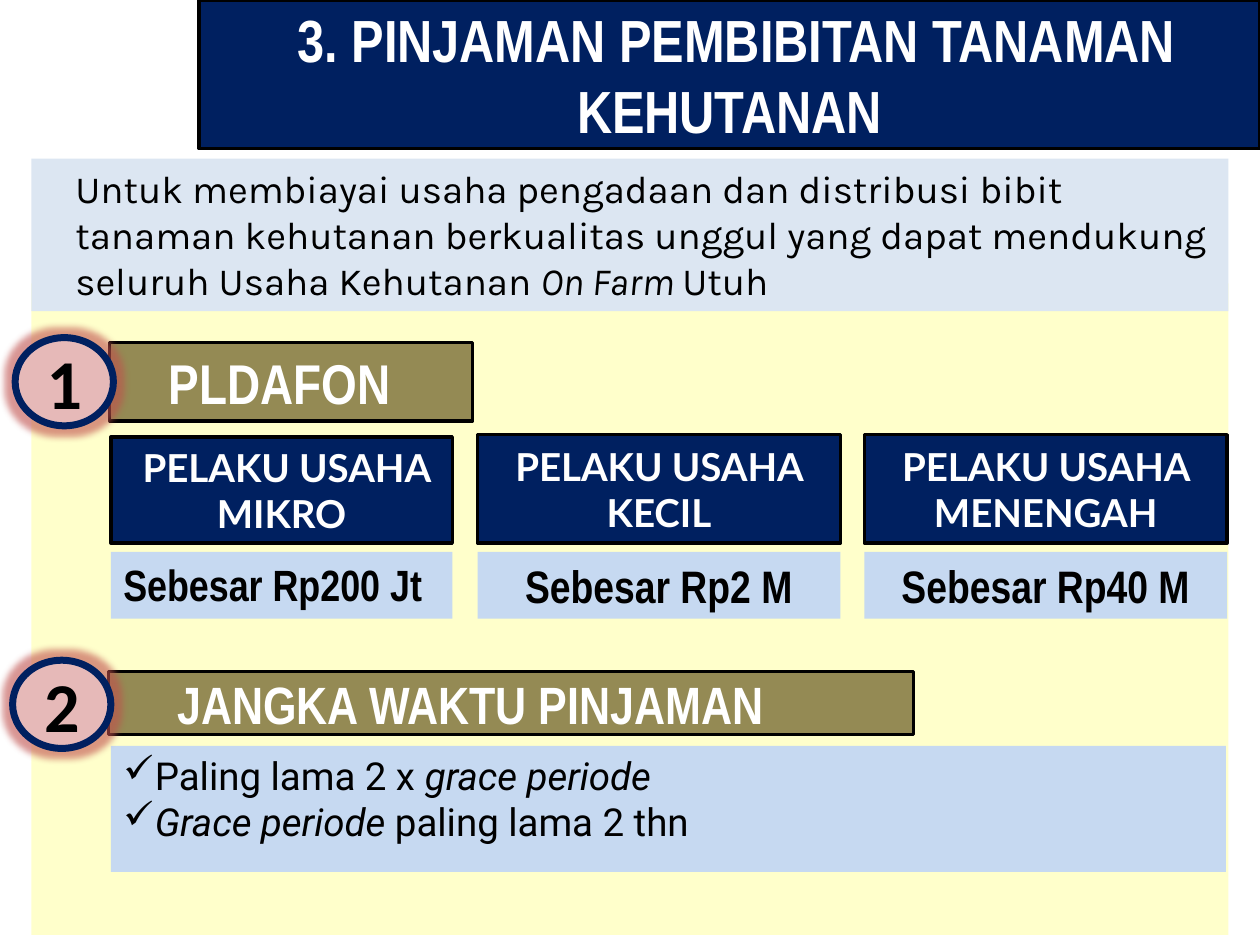
from dataclasses import dataclass

from lxml.etree import SubElement
from pptx import Presentation
from pptx.dml.color import RGBColor
from pptx.enum.shapes import MSO_SHAPE as Kind
from pptx.enum.text import MSO_ANCHOR as Anchor, PP_ALIGN as Align
from pptx.oxml.ns import qn
from pptx.util import Inches, Pt


@dataclass(frozen=True)
class Theme:
    navy: str = "002060"
    sky: str = "C6D9F1"
    pale: str = "DCE6F2"
    cream: str = "FFFF99"
    olive: str = "948A54"
    rose: str = "E6B9B8"
    glow: str = "C0504D"
    black: str = "000000"
    white: str = "FFFFFF"
    narrow: str = "Arial Narrow"
    label: str = "Lato"
    title: int = 34
    head: int = 32
    sub: int = 30
    digit: int = 40
    sum: int = 26
    body: int = 22


T = Theme()


def rgb(code):
    return RGBColor.from_string(code)


def add_tag(node, tag, **attrs):
    return SubElement(node, qn(tag), attrs)


def add_box(slide, at, fill, line=None, width=2, kind=Kind.RECTANGLE):
    box = slide.shapes.add_shape(kind, *map(Inches, at))
    box.shadow.inherit = False
    box.fill.solid()
    box.fill.fore_color.rgb = rgb(fill)
    if line:
        box.line.color.rgb = rgb(line)
        box.line.width = Pt(width)
    else:
        box.line.fill.background()
    return box


def put_text(box, text, size, font, color=T.black, bold=False,
             align=Align.LEFT, anchor=Anchor.TOP, left=0, bullet=None):
    """Fill the box, one paragraph a line; *stars* enclose italics."""
    frame = box.text_frame
    frame.word_wrap = True
    frame.vertical_anchor = anchor
    for i, line in enumerate(text.split("\n")):
        para = frame.add_paragraph() if i else frame.paragraphs[0]
        para.alignment = align
        props = para._p.get_or_add_pPr()
        props.set("marL", str(Inches(left)))
        props.set("indent", str(-Inches(left) if bullet else 0))
        if bullet:
            add_tag(props, "a:buChar", char=bullet)
        for j, part in enumerate(line.split("*")):
            if not part:
                continue
            run = para.add_run()
            run.text = part
            face = run.font
            face.size, face.name, face.bold = Pt(size), font, bold
            face.italic = j % 2 == 1
            face.color.rgb = rgb(color)


def add_label(slide, at, text, size, font, fill=T.navy, **form):
    """Outlined bar with bold white text."""
    box = add_box(slide, at, fill, T.black)
    put_text(box, text, size, font, T.white, True,
             anchor=Anchor.MIDDLE, **form)


def add_badge(slide, left, top, digit):
    disc = add_box(slide, (left, top, 0.78, 0.7), T.rose, T.navy, 4, Kind.OVAL)
    effects = disc._element.spPr.find(qn("a:effectLst"))
    glow = add_tag(effects, "a:glow", rad=str(Pt(8)))
    tint = add_tag(glow, "a:srgbClr", val=T.glow)
    add_tag(tint, "a:alpha", val="60000")
    put_text(disc, digit, T.digit, "Calibri", bold=True,
             align=Align.CENTER, anchor=Anchor.MIDDLE)


def add_panel(slide):
    panel = add_box(slide, (0.25, 2.25, 9.5, 5.17), T.cream)
    color = panel._element.spPr.find(qn("a:solidFill"))[0]
    add_tag(color, "a:alpha", val="50000")


def add_limits(slide):
    """Borrower classes, each with its loan limit beneath."""
    limits = (
        (0.88, 3.47, 2.71, " PELAKU USAHA MIKRO", "Sebesar Rp200 Jt", 25, Align.LEFT),
        (3.79, 3.45, 2.88, "PELAKU USAHA KECIL", "Sebesar Rp2 M", T.sum, Align.CENTER),
        (6.86, 3.45, 2.88, "PELAKU USAHA MENENGAH", "Sebesar Rp40 M", T.sum, Align.CENTER),
    )
    for left, top, width, name, total, size, align in limits:
        box = add_box(slide, (left, 4.38, width, 0.53), T.sky)
        put_text(box, total, size, T.narrow, bold=True, align=align)
        add_label(slide, (left, top, width, 4.31 - top), name, T.body, T.label,
                  align=Align.CENTER)


def main():
    deck = Presentation()
    deck.slide_width, deck.slide_height = Inches(10), Inches(7.5)
    slide = deck.slides.add_slide(deck.slide_layouts[6])

    add_panel(slide)
    add_limits(slide)
    terms = add_box(slide, (0.88, 5.92, 8.85, 1), T.sky)
    put_text(terms, "Paling lama 2 x *grace periode*\n*Grace periode* paling lama 2 thn",
             T.body, "Roboto", left=0.25, bullet="✓")

    add_label(slide, (1.58, 0, 8.42, 1.18),
              " 3. PINJAMAN PEMBIBITAN TANAMAN KEHUTANAN",
              T.title, T.narrow, align=Align.CENTER)
    intro = add_box(slide, (0.25, 1.26, 9.5, 1.21), T.pale)
    put_text(intro, "Untuk membiayai usaha pengadaan dan distribusi bibit tanaman "
             "kehutanan berkualitas unggul yang dapat mendukung seluruh Usaha "
             "Kehutanan *On Farm *Utuh", T.body, "Karla", left=0.25)

    add_label(slide, (0.87, 2.72, 2.88, 0.62), "PLDAFON", T.head, T.narrow,
              T.olive, left=0.37)
    add_badge(slide, 0.12, 2.68, "1")
    add_label(slide, (0.86, 5.33, 6.39, 0.5), "JANGKA WAKTU PINJAMAN", T.sub,
              T.narrow, T.olive, left=0.45)
    add_badge(slide, 0.1, 5.24, "2")
    deck.save("out.pptx")


if __name__ == "__main__":
    main()
